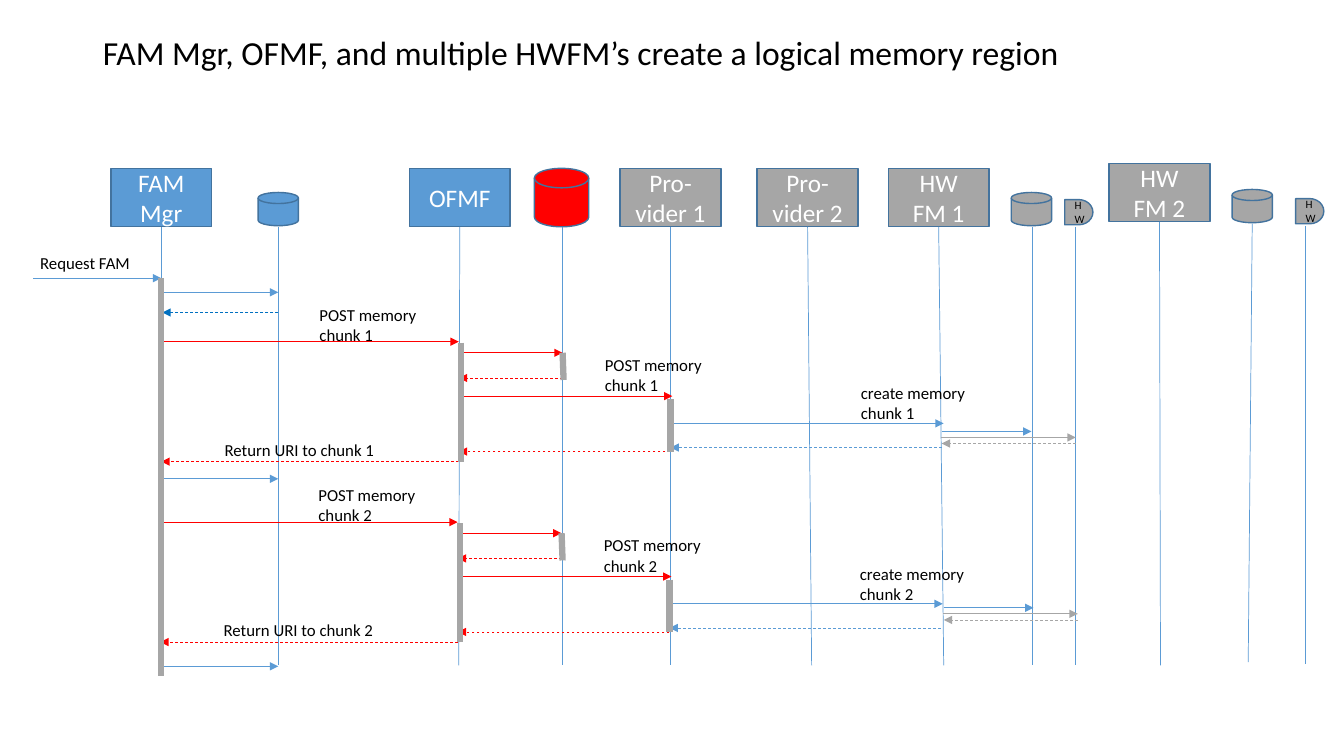
from pptx import Presentation
from pptx.dml.color import RGBColor
from pptx.enum.dml import MSO_LINE
from pptx.enum.shapes import MSO_CONNECTOR, MSO_SHAPE as Shape
from pptx.enum.text import MSO_ANCHOR, PP_ALIGN
from pptx.oxml.ns import qn
from pptx.util import Inches, Pt
from lxml.etree import SubElement

BLUE = RGBColor(0x5B, 0x9B, 0xD5)
EDGE = RGBColor(0x43, 0x73, 0x9E)
DEEP = RGBColor(0x00, 0x70, 0xC0)
RED = RGBColor(0xFF, 0x00, 0x00)
GRAY = RGBColor(0xA6, 0xA6, 0xA6)
WHITE = RGBColor(0xFF, 0xFF, 0xFF)
BLACK = RGBColor(0x00, 0x00, 0x00)

TITLE = "FAM Mgr, OFMF, and multiple HWFM’s create a logical memory region"

# text, left, top, fill
BOXES = [
    ("FAM Mgr", 1.1, 1.67, BLUE),
    ("OFMF", 4.06, 1.67, BLUE),
    ("Pro-vider 1", 6.15, 1.67, GRAY),
    ("Pro-vider 2", 7.51, 1.67, GRAY),
    ("HW\nFM 1", 8.81, 1.67, GRAY),
    ("HW\nFM 2", 11, 1.62, GRAY),
]
# left, top, width, height, fill
DISKS = [
    (2.56, 1.91, 0.4, 0.33, BLUE),
    (5.3, 1.67, 0.54, 0.58, RED),
    (10.03, 1.91, 0.4, 0.33, GRAY),
    (12.22, 1.88, 0.4, 0.33, GRAY),
]
DEVICES = [(10.56, 1.98), (12.85, 1.97)]

# top x, bottom x, top y, bottom y
LIVES = [
    (1.6, 1.6, 2.25, 6.6),
    (2.76, 2.76, 2.25, 6.6),
    (4.56, 4.55, 2.25, 6.6),
    (5.58, 5.58, 2.25, 6.6),
    (6.65, 6.65, 2.25, 6.6),
    (8.01, 8.05, 2.25, 6.6),
    (9.31, 9.36, 2.25, 6.6),
    (10.24, 10.24, 2.25, 6.6),
    (10.67, 10.67, 2.25, 6.6),
    (11.5, 11.51, 2.2, 6.6),
    (12.42, 12.38, 2.22, 6.57),
    (12.95, 12.95, 2.24, 6.59),
]

# from x, to x, y, colour; an arrow that runs left is a dashed reply
CALLS = [
    (0.33, 1.6, 2.76, BLUE),
    (1.61, 2.76, 2.9, BLUE),
    (2.76, 1.61, 3.1, DEEP),
    (1.61, 2.76, 4.75, BLUE),
    (1.61, 2.76, 6.61, BLUE),
]
CHUNK_CALLS = [
    (1.61, 4.55, 3.39, RED),
    (4.55, 5.58, 3.5, RED),
    (5.58, 4.55, 3.75, RED),
    (4.57, 6.67, 3.93, RED),
    (6.67, 9.36, 4.2, BLUE),
    (9.34, 6.65, 4.44, BLUE),
    (6.65, 4.55, 4.48, RED),
    (4.55, 1.6, 4.58, RED),
]
HW_CALLS = [
    (9.34, 10.23, 4.28, BLUE),
    (9.33, 10.67, 4.34, GRAY),
    (10.67, 9.34, 4.4, GRAY),
]
# top x, bottom x, top y, bottom y
CHUNK_BARS = [
    (5.58, 5.59, 3.5, 3.77),
    (6.65, 6.65, 3.96, 4.48),
    (4.57, 4.57, 3.4, 4.58),
]
# text, left, top, width, height
CHUNK_NOTES = [
    ("POST memory chunk", 3.07, 2.97, 1.27, 0.5),
    ("POST memory chunk", 5.9, 3.47, 1.27, 0.5),
    ("create memory chunk", 8.44, 3.75, 1.27, 0.5),
    ("Return URI to chunk", 2.13, 4.31, 1.93, 0.3),
]
# chunk number, shift of its calls, shift of its hardware calls
CHUNKS = [(1, (0, 0), (0, 0)), (2, (-0.01, 1.79), (0.02, 1.75))]


def style(frame, size, color, align):
    for para in frame.paragraphs:
        para.alignment = align
        for run in para.runs:
            run.font.name = "Calibri"
            run.font.size = Pt(size)
            run.font.color.rgb = color


def add_head(kind, left, top, width, height, fill, text="", size=18, color=WHITE):
    """Add one participant at the top of a lifeline."""
    head = shapes.add_shape(kind, Inches(left), Inches(top), Inches(width), Inches(height))
    head.shadow.inherit = False
    head.fill.solid()
    head.fill.fore_color.rgb = fill
    head.line.color.rgb = EDGE
    head.line.width = Pt(1)
    if text:
        head.text_frame.text = text
        head.text_frame.vertical_anchor = MSO_ANCHOR.MIDDLE
        style(head.text_frame, size, color, PP_ALIGN.CENTER)


def add_line(x1, y1, x2, y2, color, width=0.5):
    line = shapes.add_connector(
        MSO_CONNECTOR.STRAIGHT, Inches(x1), Inches(y1), Inches(x2), Inches(y2))
    line.line.color.rgb = color
    line.line.width = Pt(width)
    SubElement(line._element.spPr, qn("a:effectLst"))
    return line


def add_calls(calls, dx=0, dy=0):
    for start, end, y, color in calls:
        arrow = add_line(start + dx, y + dy, end + dx, y + dy, color)
        if end < start:
            arrow.line.dash_style = MSO_LINE.DASH
        SubElement(arrow.line._get_or_add_ln(), qn("a:tailEnd"), type="triangle")


def add_note(text, left, top, width, height, wrap=True):
    box = shapes.add_textbox(Inches(left), Inches(top), Inches(width), Inches(height))
    box.text_frame.word_wrap = wrap
    box.text_frame.text = text
    style(box.text_frame, 12, BLACK, PP_ALIGN.LEFT)


deck = Presentation()
deck.slide_width, deck.slide_height = Inches(13.33), Inches(7.5)
slide = deck.slides.add_slide(deck.slide_layouts[5])
shapes = slide.shapes

title = shapes.title
title.left, title.top = Inches(0.92), Inches(0.23)
title.width, title.height = Inches(11.5), Inches(0.62)
title.text_frame.text = TITLE
title.text_frame.vertical_anchor = MSO_ANCHOR.MIDDLE
title.text_frame.paragraphs[0].line_spacing = 0.9
style(title.text_frame, 24, BLACK, PP_ALIGN.LEFT)

for text, left, top, fill in BOXES:
    add_head(Shape.RECTANGLE, left, top, 1, 0.58, fill, text)
for disk in DISKS:
    add_head(Shape.FLOWCHART_MAGNETIC_DISK, *disk)
for left, top in DEVICES:
    add_head(Shape.FLOWCHART_DELAY, left, top, 0.28, 0.25, GRAY, "HW", 8, BLACK)
for x1, x2, top, end in LIVES:
    add_line(x1, top, x2, end, BLUE)

add_calls(CALLS)
add_note("Request FAM", 0.3, 2.46, 1.1, 0.3, wrap=False)
for number, (dx, dy), hw_shift in CHUNKS:
    add_calls(CHUNK_CALLS, dx, dy)
    add_calls(HW_CALLS, *hw_shift)
    for x1, x2, top, end in CHUNK_BARS:
        add_line(x1 + dx, top + dy, x2 + dx, end + dy, GRAY, 4.5)
    for text, left, top, width, height in CHUNK_NOTES:
        add_note(f"{text} {number}", left + dx, top + dy, width, height)
add_line(1.6, 2.76, 1.6, 6.71, GRAY, 4.5)

deck.save("out.pptx")
